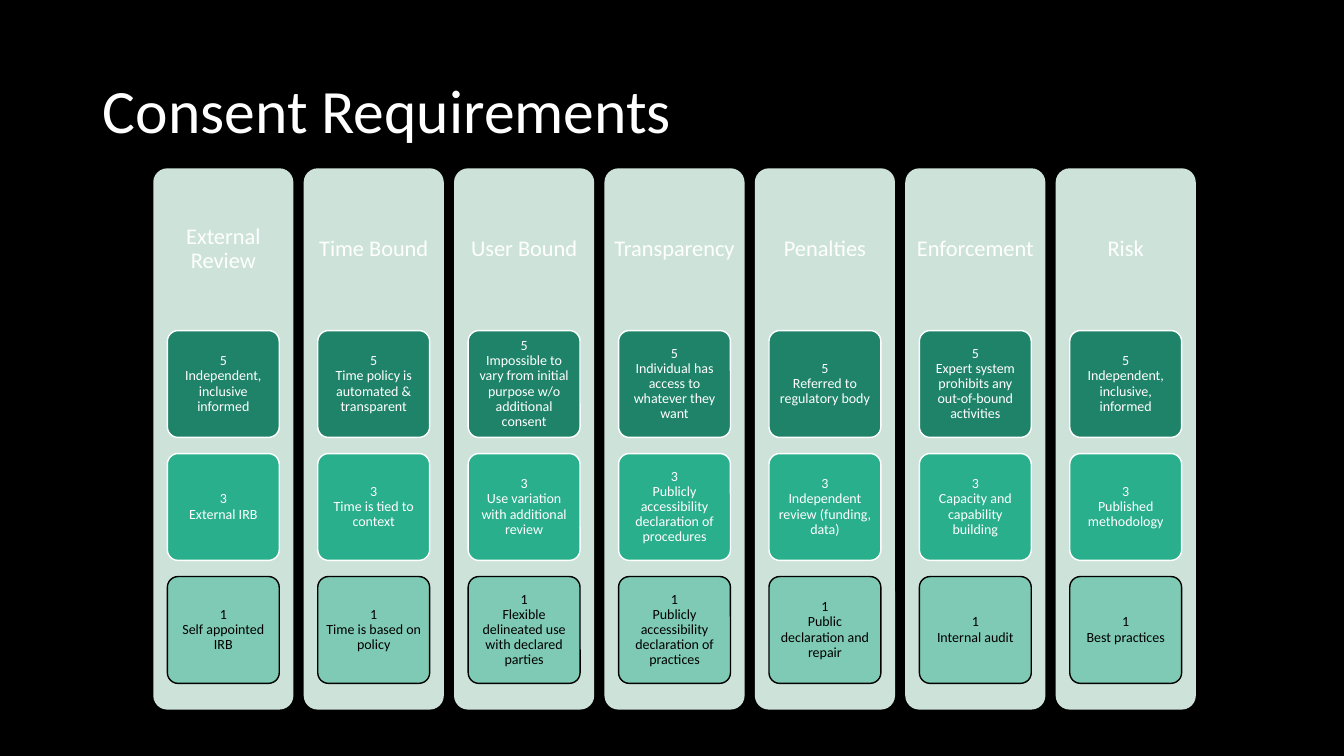
from lxml.etree import SubElement
from pptx import Presentation
from pptx.dml.color import RGBColor
from pptx.enum.shapes import MSO_SHAPE as Shape
from pptx.enum.text import MSO_ANCHOR as Anchor, PP_ALIGN as Align
from pptx.oxml.ns import qn
from pptx.util import Inches, Pt

BLACK = RGBColor(0x00, 0x00, 0x00)
WHITE = RGBColor(0xFF, 0xFF, 0xFF)
PALE_GREEN = RGBColor(0xCD, 0xE3, 0xDA)
DARK_GREEN = RGBColor(0x1F, 0x83, 0x69)
GREEN = RGBColor(0x29, 0xAF, 0x8C)

FONT = "Calibri"
COLUMN_LEFT, COLUMN_TOP = 1.52, 1.67
COLUMN_WIDTH, COLUMN_HEIGHT = 1.39, 5.37
COLUMN_STEP = (10.47 - COLUMN_LEFT) / 6
HEADING_HEIGHT = 1.61
CARD_WIDTH, CARD_HEIGHT = 1.11, 1.06
CARD_TOP, CARD_STEP = 3.28, 1.22
CARD_INDENT = (COLUMN_WIDTH - CARD_WIDTH) / 2

LEVELS = [
    (5, DARK_GREEN, 100, WHITE),
    (3, GREEN, 100, WHITE),
    (1, GREEN, 48, BLACK),
]

REQUIREMENTS = [
    ("External Review", "Independent, inclusive informed", "External IRB",
     "Self appointed IRB"),
    ("Time Bound", "Time policy is automated & transparent",
     "Time is tied to context", "Time is based on policy"),
    ("User Bound",
     "Impossible to vary from initial purpose w/o additional consent",
     "Use variation with additional review",
     "Flexible delineated use with declared parties"),
    ("Transparency", "Individual has access to whatever they want",
     "Publicly accessibility declaration of procedures",
     "Publicly accessibility declaration of practices"),
    ("Penalties", "Referred to regulatory body",
     "Independent review (funding, data)", "Public declaration and repair"),
    ("Enforcement", "Expert system prohibits any out-of-bound activities",
     "Capacity and capability building", "Internal audit"),
    ("Risk", "Independent, inclusive, informed", "Published methodology",
     "Best practices"),
]


def write_text(frame, text, size, color, align=Align.CENTER):
    frame.word_wrap = True
    frame.vertical_anchor = Anchor.MIDDLE
    para = frame.paragraphs[0]
    para.text = text
    para.alignment = align
    para.line_spacing = 0.9
    for span in para.runs:
        span.font.name = FONT
        span.font.size = Pt(size)
        span.font.color.rgb = color
    for line_break in para._p.findall(qn("a:br")):
        SubElement(line_break, qn("a:rPr"), sz=str(size * 100))


def set_insets(frame, horizontal, vertical):
    frame.margin_left = frame.margin_right = Inches(horizontal)
    frame.margin_top = frame.margin_bottom = Inches(vertical)


def add_panel(page, left, top, width, height, fill, opacity=100):
    panel = page.shapes.add_shape(
        Shape.ROUNDED_RECTANGLE,
        Inches(left), Inches(top), Inches(width), Inches(height))
    panel.adjustments[0] = 0.1
    panel.shadow.inherit = False
    panel.fill.solid()
    panel.fill.fore_color.rgb = fill
    panel.line.fill.background()
    if opacity < 100:
        color = panel.fill._xPr.find(qn("a:solidFill"))[0]
        SubElement(color, qn("a:alpha"), val=str(opacity * 1000))
    return panel


def add_heading(page, left, text):
    box = page.shapes.add_textbox(
        Inches(left), Inches(COLUMN_TOP),
        Inches(COLUMN_WIDTH), Inches(HEADING_HEIGHT))
    set_insets(box.text_frame, 0.07, 0.07)
    write_text(box.text_frame, text, 16, WHITE)


def add_card(page, left, top, text, fill, opacity, ink):
    card = add_panel(page, left, top, CARD_WIDTH, CARD_HEIGHT, fill, opacity)
    card.line.color.rgb = ink
    card.line.width = Pt(1)
    set_insets(card.text_frame, 0.03, 0.02)
    write_text(card.text_frame, text, 10, ink)


def add_requirement(page, left, heading, descriptions):
    add_panel(page, left, COLUMN_TOP, COLUMN_WIDTH, COLUMN_HEIGHT, PALE_GREEN)
    add_heading(page, left, heading)
    for row, (level, description) in enumerate(zip(LEVELS, descriptions)):
        score, fill, opacity, ink = level
        add_card(page, left + CARD_INDENT, CARD_TOP + row * CARD_STEP,
                 f"{score}\n{description}", fill, opacity, ink)


def add_title(page, text):
    title = page.shapes.title
    title.left, title.top = Inches(0.92), Inches(0.4)
    title.width, title.height = Inches(11.5), Inches(1.45)
    write_text(title.text_frame, text, 44, WHITE, Align.LEFT)


def main():
    deck = Presentation()
    deck.slide_width, deck.slide_height = Inches(13.33), Inches(7.5)
    page = deck.slides.add_slide(deck.slide_layouts[5])
    page.background.fill.solid()
    page.background.fill.fore_color.rgb = BLACK
    add_title(page, "Consent Requirements")
    for column, (heading, *descriptions) in enumerate(REQUIREMENTS):
        left = COLUMN_LEFT + column * COLUMN_STEP
        add_requirement(page, left, heading, descriptions)
    deck.save("out.pptx")


if __name__ == "__main__":
    main()
